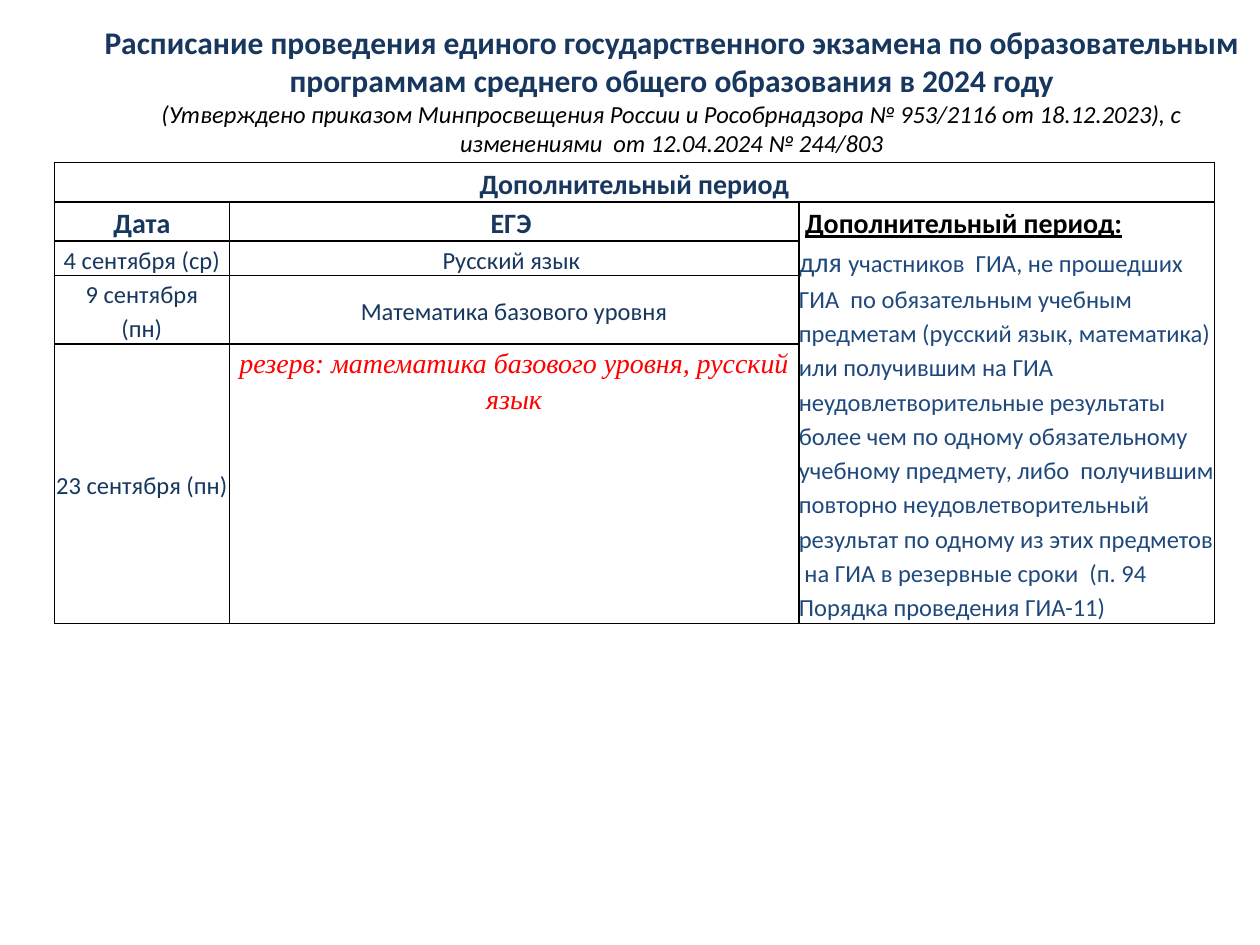
import pptx
import pptx.dml.color
import pptx.enum.text
import pptx.oxml
import pptx.oxml.ns
import pptx.util

Pt = pptx.util.Pt
ALIGN = pptx.enum.text.PP_ALIGN
ANCHOR = pptx.enum.text.MSO_ANCHOR

NAVY, BLUE, RED, BLACK = "17375E", "1F497D", "FF0000", "000000"
HEAD = dict(size=16, color=NAVY, bold=True)
BODY = dict(size=14, color=NAVY)

TITLE = [
    [("Расписание проведения единого государственного экзамена по образовательным "
      "программам среднего общего образования в 2024 году", dict(HEAD, size=18))],
    [("(Утверждено приказом Минпросвещения России и Рособрнадзора № 953/2116 "
      "от 18.12.2023), с изменениями  от 12.04.2024 № 244/803",
      dict(size=14, color=BLACK, italic=True))],
]
NOTE = [
    [(" ", dict(size=16, color=BLACK)),
     ("Дополнительный период:", dict(size=16, color=BLACK, bold=True, underline=True))],
    [("для ", dict(size=16, color=BLUE)),
     ("участников  ГИА, не прошедших ГИА  по обязательным учебным  предметам "
      "(русский язык, математика) или получившим на ГИА  неудовлетворительные "
      "результаты более чем по одному обязательному учебному предмету, либо  "
      "получившим повторно неудовлетворительный результат по одному из этих "
      "предметов  на ГИА в резервные сроки  (п. 94 Порядка проведения ГИА-11)",
      dict(size=14, color=BLUE))],
]
RESERVE = dict(size=16, color=RED, italic=True, font="Times New Roman")

COLS = [100.1, 325.4, 237.6]
ROWS = [22.4, 22.4, 19.6, 39.2, 159.6]
CELLS = [
    (0, 0, [[("Дополнительный период", HEAD)]], 2.9, ANCHOR.TOP),
    (1, 0, [[("Дата", HEAD)]], 0, ANCHOR.TOP),
    (1, 1, [[("ЕГЭ ", HEAD)]], 0, ANCHOR.TOP),
    (1, 2, NOTE, 0, ANCHOR.TOP),
    (2, 0, [[("4 сентября (ср)", BODY)]], 5, ANCHOR.MIDDLE),
    (2, 1, [[("Русский язык ", BODY)]], 5, ANCHOR.MIDDLE),
    (3, 0, [[("9 сентября (пн)", BODY)]], 5, ANCHOR.MIDDLE),
    (3, 1, [[("Математика базового уровня", BODY)]], 5, ANCHOR.MIDDLE),
    (4, 0, [[("23 сентября (пн)", BODY)]], 0, ANCHOR.MIDDLE),
    (4, 1, [[("резерв: математика базового уровня, русский язык", RESERVE)]], 0, ANCHOR.TOP),
]


def rgb(value):
    return pptx.dml.color.RGBColor.from_string(value)


def write(tf, paragraphs, align, spacing):
    for i, runs in enumerate(paragraphs):
        p = tf.add_paragraph() if i else tf.paragraphs[0]
        p.alignment = align
        p.line_spacing = spacing
        for text, style in runs:
            r = p.add_run()
            r.text = text
            r.font.name = style.get("font", "Calibri")
            r.font.size = Pt(style["size"])
            r.font.color.rgb = rgb(style["color"])
            r.font.bold = style.get("bold", False)
            r.font.italic = style.get("italic", False)
            r.font.underline = style.get("underline", False)


def add_borders(cell, color, width):
    tc_pr = cell._tc.get_or_add_tcPr()
    for i, side in enumerate(("lnL", "lnR", "lnT", "lnB")):
        tc_pr.insert(i, pptx.oxml.parse_xml(
            f'<a:{side} {pptx.oxml.ns.nsdecls("a")} w="{Pt(width)}"><a:solidFill>'
            f'<a:srgbClr val="{color}"/></a:solidFill></a:{side}>'))


def add_title(s):
    sp = s.shapes.title
    sp.left, sp.top, sp.width, sp.height = Pt(48), Pt(9.5), Pt(672), Pt(124)
    tf = sp.text_frame
    tf.word_wrap = True
    tf.auto_size = pptx.enum.text.MSO_AUTO_SIZE.NONE
    tf.vertical_anchor = ANCHOR.TOP
    write(tf, TITLE, ALIGN.CENTER, 1.0)


def add_schedule(s):
    table = s.shapes.add_table(len(ROWS), len(COLS), Pt(31), Pt(92.8),
                               Pt(sum(COLS)), Pt(sum(ROWS))).table
    table.first_row = table.horz_banding = False
    for col, width in zip(table.columns, COLS):
        col.width = Pt(width)
    for row, height in zip(table.rows, ROWS):
        row.height = Pt(height)
    for cell in table.iter_cells():
        cell.fill.background()
        add_borders(cell, BLACK, 1)
        cell.margin_left = cell.margin_right = cell.margin_top = cell.margin_bottom = 0
    table.cell(0, 0).merge(table.cell(0, 2))
    table.cell(1, 2).merge(table.cell(4, 2))
    for row, col, paragraphs, inset, anchor in CELLS:
        cell = table.cell(row, col)
        cell.margin_left = cell.margin_right = Pt(inset)
        cell.vertical_anchor = anchor
        write(cell.text_frame, paragraphs, ALIGN.LEFT if col == 2 else ALIGN.CENTER, 1.15)
        if col == 0 and row > 1:
            cell.text_frame.paragraphs[0].space_after = Pt(10)


def main():
    prs = pptx.Presentation()
    prs.slide_width, prs.slide_height = Pt(720), Pt(540)
    s = prs.slides.add_slide(prs.slide_layouts[5])
    add_title(s)
    add_schedule(s)
    prs.save("out.pptx")


if __name__ == "__main__":
    main()
